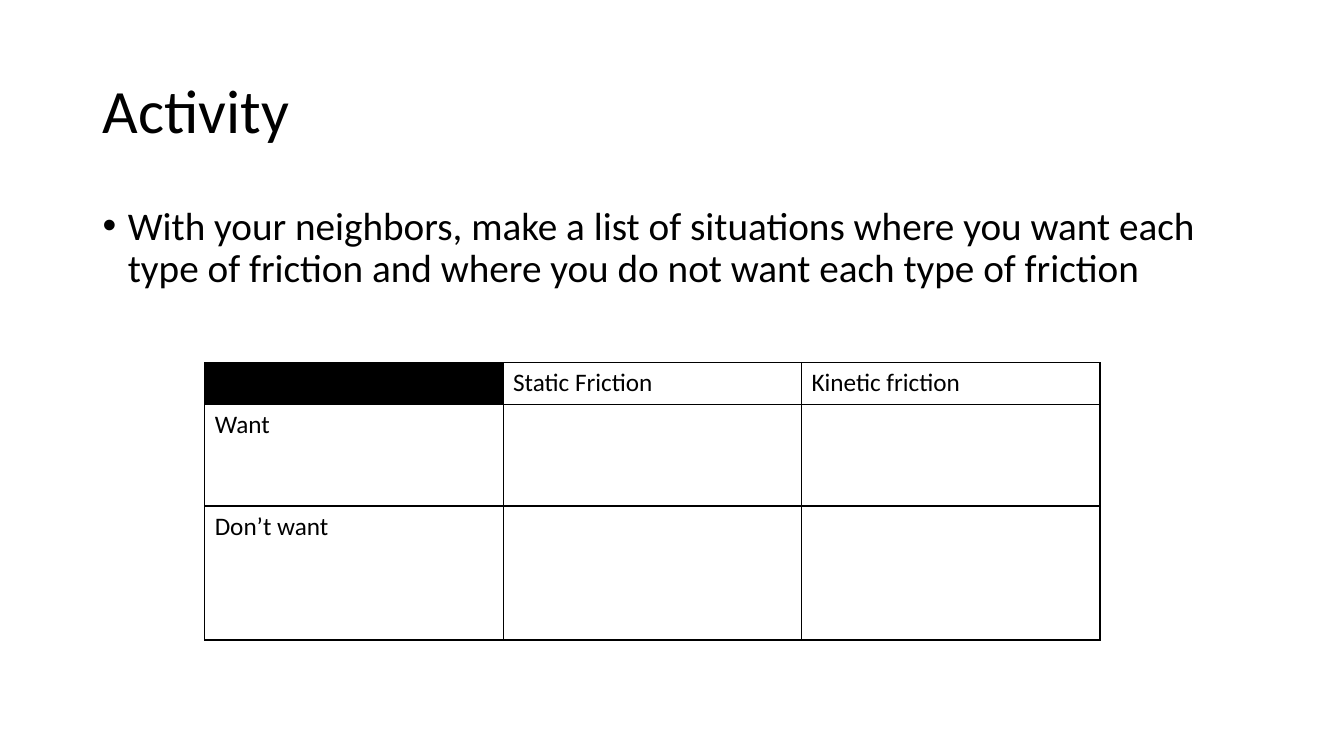
"""Builds the friction activity slide."""
import pptx
import pptx.dml.color
import pptx.enum.text
import pptx.oxml
import pptx.oxml.ns
import pptx.util

WIDTH, HEIGHT = 13.33, 7.5
FONT, BLACK = "Calibri", "000000"
MARGIN, TEXT_WIDTH = 0.92, 11.5
COLUMN_WIDTH = 2.96
ROW_HEIGHTS = (0.41, 1.01, 1.33)
ROWS = (
    ("", "Static Friction", "Kinetic friction"),
    ("Want", "", ""),
    ("Don’t want", "", ""),
)


def inches(*lengths):
    """Return the lengths as a list of slide units."""
    return [pptx.util.Inches(length) for length in lengths]


def colour(value):
    """Return the colour for a hex string."""
    return pptx.dml.color.RGBColor.from_string(value)


def xml_element(markup):
    """Parse markup that uses the a: prefix."""
    namespace = pptx.oxml.ns.nsdecls("a")
    return pptx.oxml.parse_xml(markup.replace(" ", f" {namespace} ", 1))


def write(frame, text, size, spacing=1.0, before=0, anchor="TOP"):
    """Write one left-aligned paragraph and return it."""
    frame.word_wrap = True
    frame.auto_size = pptx.enum.text.MSO_AUTO_SIZE.NONE
    frame.vertical_anchor = pptx.enum.text.MSO_ANCHOR[anchor]
    para = frame.paragraphs[0]
    para.alignment = pptx.enum.text.PP_ALIGN.LEFT
    para.line_spacing = spacing
    para.space_before = pptx.util.Pt(before)
    span = para.add_run()
    span.text = text
    span.font.name = FONT
    span.font.size = pptx.util.Pt(size)
    span.font.color.rgb = colour(BLACK)
    return para


def add_title(page, text):
    """Place and format the title placeholder."""
    title = page.shapes.title
    title.left, title.top, title.width, title.height = inches(MARGIN, 0.4, TEXT_WIDTH, 1.45)
    write(title.text_frame, text, 44, spacing=0.9, anchor="MIDDLE")


def add_bullet(page, text):
    """Add the bulleted instruction."""
    box = page.shapes.add_textbox(*inches(MARGIN, 2, TEXT_WIDTH, 4.76))
    para = write(box.text_frame, text, 28, spacing=0.9, before=10)
    indent = pptx.util.Inches(0.25)
    properties = para._p.get_or_add_pPr()
    properties.set("marL", str(indent))
    properties.set("indent", str(-indent))
    properties.append(xml_element('<a:buFont typeface="Arial"/>'))
    properties.append(xml_element('<a:buChar char="•"/>'))


def format_cell(cell, fill):
    """Fill a cell, or leave it clear, and give it thin black borders."""
    properties = cell._tc.get_or_add_tcPr()
    for side in ("lnL", "lnR", "lnT", "lnB"):
        properties.append(xml_element(
            f'<a:{side} w="{pptx.util.Pt(1)}"><a:solidFill>'
            f'<a:srgbClr val="{BLACK}"/></a:solidFill></a:{side}>'))
    if fill:
        cell.fill.solid()
        cell.fill.fore_color.rgb = colour(fill)
    else:
        cell.fill.background()


def add_grid(page):
    """Add the table of friction types against wishes."""
    columns = len(ROWS[0])
    area = inches(2.03, 3.6, COLUMN_WIDTH * columns, sum(ROW_HEIGHTS))
    table = page.shapes.add_table(len(ROWS), columns, *area).table
    table.first_row = table.horz_banding = False
    for column in table.columns:
        column.width = pptx.util.Inches(COLUMN_WIDTH)
    for r, (texts, height) in enumerate(zip(ROWS, ROW_HEIGHTS)):
        table.rows[r].height = pptx.util.Inches(height)
        for c, text in enumerate(texts):
            cell = table.cell(r, c)
            format_cell(cell, BLACK if r == c == 0 else None)
            if text:
                write(cell.text_frame, text, 18)


def main():
    """Build and save the deck."""
    deck = pptx.Presentation()
    deck.slide_width, deck.slide_height = inches(WIDTH, HEIGHT)
    page = deck.slides.add_slide(deck.slide_layouts[5])
    add_title(page, "Activity")
    add_bullet(page, "With your neighbors, make a list of situations where you want each "
                     "type of friction and where you do not want each type of friction")
    add_grid(page)
    deck.save("out.pptx")


if __name__ == "__main__":
    main()
